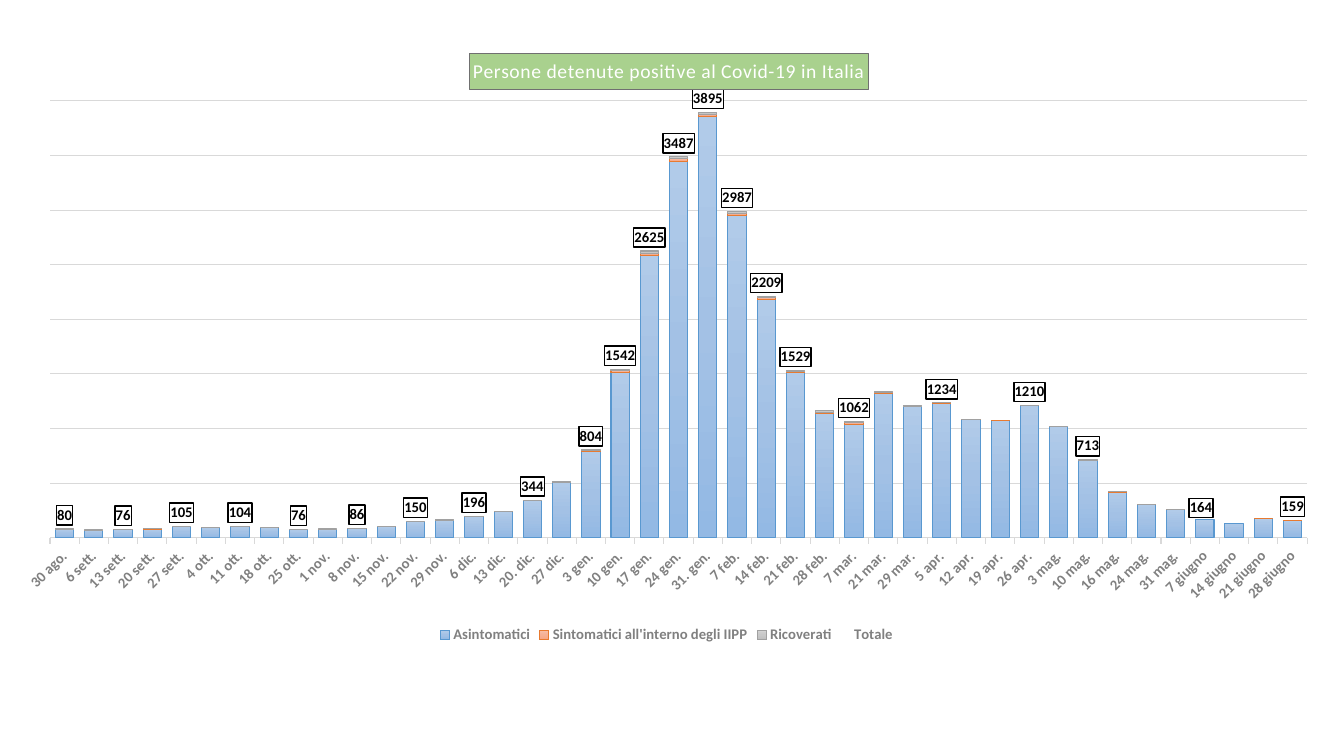
from dataclasses import dataclass

from lxml.etree import SubElement
from pptx import Presentation
from pptx.chart.chart import Chart
from pptx.chart.data import CategoryChartData
from pptx.dml.color import RGBColor
from pptx.enum.chart import XL_CHART_TYPE, XL_LABEL_POSITION, XL_LEGEND_POSITION, XL_TICK_MARK
from pptx.oxml import parse_xml
from pptx.oxml.ns import nsdecls, qn
from pptx.util import Cm, Pt

FONT = "Calibri"
BLACK = RGBColor(0x00, 0x00, 0x00)
WHITE = RGBColor(0xFF, 0xFF, 0xFF)
GRAY = RGBColor(0x80, 0x80, 0x80)
GRID = RGBColor(0xD9, 0xD9, 0xD9)
GREEN = RGBColor(0xA9, 0xD1, 0x8E)
TITLE_LINE = RGBColor(0x70, 0x70, 0x70)

DATES = [
    "30 ago.", "6 sett.", "13 sett.", "20 sett.", "27 sett.", "4 ott.", "11 ott.", "18 ott.",
    "25 ott.", "1 nov.", "8 nov.", "15 nov.", "22 nov.", "29 nov.", "6 dic.", "13 dic.",
    "20. dic.", "27 dic.", "3 gen.", "10 gen.", "17 gen.", "24 gen.", "31. gen.", "7 feb.",
    "14 feb.", "21 feb.", "28 feb.", " 7 mar.", "21 mar.", "29 mar.", "5 apr.", "12 apr.",
    "19 apr.", "26 apr.", "3 mag.", "10 mag.", "16 mag.", "24 mag.", "31 mag.", "7 giugno",
    "14 giugno", "21 giugno", "28 giugno",
]
ASYMPTOMATIC = [
    75, 66, 71, 76, 100, 93, 100, 90, 71, 74, 81, 98, 146, 158, 193, 236, 339, 501, 786, 1511,
    2586, 3448, 3859, 2953, 2181, 1510, 1138, 1040, 1322, 1199, 1232, 1078, 1068, 1208, 1020,
    707, 417, 300, 254, 164, 130, 177, 158,
]
TOTAL = [
    80, 70, 76, 83, 105, 97, 104, 95, 76, 79, 86, 103, 150, 162, 196, 239, 344, 510, 804, 1542,
    2625, 3487, 3895, 2987, 2209, 1529, 1160, 1062, 1341, 1208, 1234, 1080, 1069, 1210, 1022,
    713, 420, 302, 256, 164, 130, 178, 159,
]
OTHERS = [total - part for total, part in zip(TOTAL, ASYMPTOMATIC)]
HOSPITAL = [other // 2 for other in OTHERS]
SYMPTOMATIC = [other - part for other, part in zip(OTHERS, HOSPITAL)]
UNLABELLED = [*range(1, 18, 2), 26, 28, 29, 31, 32, 34, *range(36, 42)]
MOVED_LABEL = 39


@dataclass(frozen=True)
class Band:
    name: str
    values: list[int]
    gradient: tuple[str, ...] = ()
    line: RGBColor | None = None


BANDS = [
    Band("Asintomatici", ASYMPTOMATIC, ("B1CBE9", "A3C1E5", "93B9E4"), RGBColor(0x59, 0x98, 0xD0)),
    Band("Sintomatici all'interno degli IIPP", SYMPTOMATIC, ("F7BDA5", "F5B196", "F8A582"),
         RGBColor(0xE8, 0x7A, 0x30)),
    Band("Ricoverati", HOSPITAL, ("D2D2D2", "C8C8C8", "C0C0C0"), RGBColor(0xA1, 0xA1, 0xA1)),
    Band("Totale", TOTAL),
]


def style_font(font, size: float, color: RGBColor, bold: bool = True) -> None:
    font.name = FONT
    font.size = Pt(size)
    font.bold = bold
    font.color.rgb = color


def style_line(line, color: RGBColor) -> None:
    line.color.rgb = color
    line.width = Pt(0.75)


def set_layout(parent, index: int, **places: float) -> None:
    for old in parent.findall(qn("c:layout")):
        parent.remove(old)
    layout = parse_xml(f"<c:layout {nsdecls('c')}/>")
    manual = SubElement(layout, qn("c:manualLayout"))
    for name, value in places.items():
        SubElement(manual, qn(f"c:{name}")).set("val", str(value))
    parent.insert(index, layout)


def frame_label(label) -> None:
    label.find(qn("c:txPr")).addprevious(parse_xml(
        f"<c:spPr {nsdecls('c', 'a')}><a:solidFill><a:srgbClr val='{WHITE}'/></a:solidFill>"
        f"<a:ln w='12700'><a:solidFill><a:srgbClr val='{BLACK}'/></a:solidFill></a:ln></c:spPr>"))


def paint_band(series, band: Band) -> None:
    series.invert_if_negative = False
    if band.line is None:
        series.format.fill.background()
        series.format.line.fill.background()
        return
    style_line(series.format.line, band.line)
    stops = "".join(f"<a:gs pos='{index * 50000}'><a:srgbClr val='{color}'/></a:gs>"
                    for index, color in enumerate(band.gradient))
    series.format.line._get_or_add_ln().addprevious(parse_xml(
        f"<a:gradFill {nsdecls('a')}><a:gsLst>{stops}</a:gsLst>"
        "<a:lin ang='5400000' scaled='0'/></a:gradFill>"))


def label_totals(series) -> None:
    labels = series.data_labels
    labels.show_value = True
    labels.position = XL_LABEL_POSITION.INSIDE_BASE
    style_font(labels.font, 10.5, BLACK)
    frame_label(labels._element)
    for order, index in enumerate(UNLABELLED):
        labels._element.insert(order, parse_xml(
            f"<c:dLbl {nsdecls('c')}><c:idx val='{index}'/><c:delete val='1'/></c:dLbl>"))


def label_moved_point(series) -> None:
    style_font(series.points[MOVED_LABEL].data_label.font, 10.5, BLACK)
    series.data_labels.show_value = False
    label = series.data_labels._element.find(qn("c:dLbl"))
    set_layout(label, 1, x=-0.003, y=-0.034)
    frame_label(label)


def add_title(chart: Chart) -> None:
    title = chart.chart_title
    para = title.text_frame.paragraphs[0]
    span = para.add_run()
    span.text = "Persone detenute positive al Covid-19 in Italia"
    style_font(span.font, 14, WHITE, False)
    span.font._element.set("spc", "30")
    title.format.fill.solid()
    title.format.fill.fore_color.rgb = GREEN
    style_line(title.format.line, TITLE_LINE)
    set_layout(title._element, 1, xMode="edge", yMode="edge", x=0.352, y=0.03)


def style_axes(chart: Chart) -> None:
    dates = chart.category_axis
    dates.major_tick_mark = XL_TICK_MARK.OUTSIDE
    style_font(dates.tick_labels.font, 10.5, GRAY)
    style_line(dates.format.line, GRID)
    dates._element.find(qn("c:txPr")).find(qn("a:bodyPr")).set("rot", "-2700000")
    counts = chart.value_axis
    counts.minimum_scale, counts.maximum_scale, counts.major_unit = 0, 4000, 500
    counts.has_major_gridlines = True
    style_line(counts.major_gridlines.format.line, GRID)
    counts.visible = False


def main() -> None:
    deck = Presentation()
    deck.slide_width, deck.slide_height = Cm(33.87), Cm(19.05)
    page = deck.slides.add_slide(deck.slide_layouts[6])
    data = CategoryChartData()
    data.categories = DATES
    for band in BANDS:
        data.add_series(band.name, band.values)
    chart = page.shapes.add_chart(
        XL_CHART_TYPE.COLUMN_STACKED, Cm(0), Cm(0.89), Cm(33.6), Cm(15.44), data).chart
    style_font(chart.font, 10, BLACK, False)
    add_title(chart)
    style_axes(chart)
    plot = chart.plots[0]
    plot.gap_width, plot.overlap, plot.vary_by_categories = 60, 100, False
    for series, band in zip(plot.series, BANDS):
        paint_band(series, band)
    label_moved_point(plot.series[0])
    label_totals(plot.series[3])
    set_layout(chart._chartSpace.chart.plotArea, 0, layoutTarget="inner", xMode="edge",
               yMode="edge", x=0.0375, y=0.107, w=0.943, h=0.713)
    chart.has_legend = True
    chart.legend.position = XL_LEGEND_POSITION.BOTTOM
    chart.legend.include_in_layout = False
    style_font(chart.legend.font, 10.5, GRAY)
    deck.save("out.pptx")


if __name__ == "__main__":
    main()
